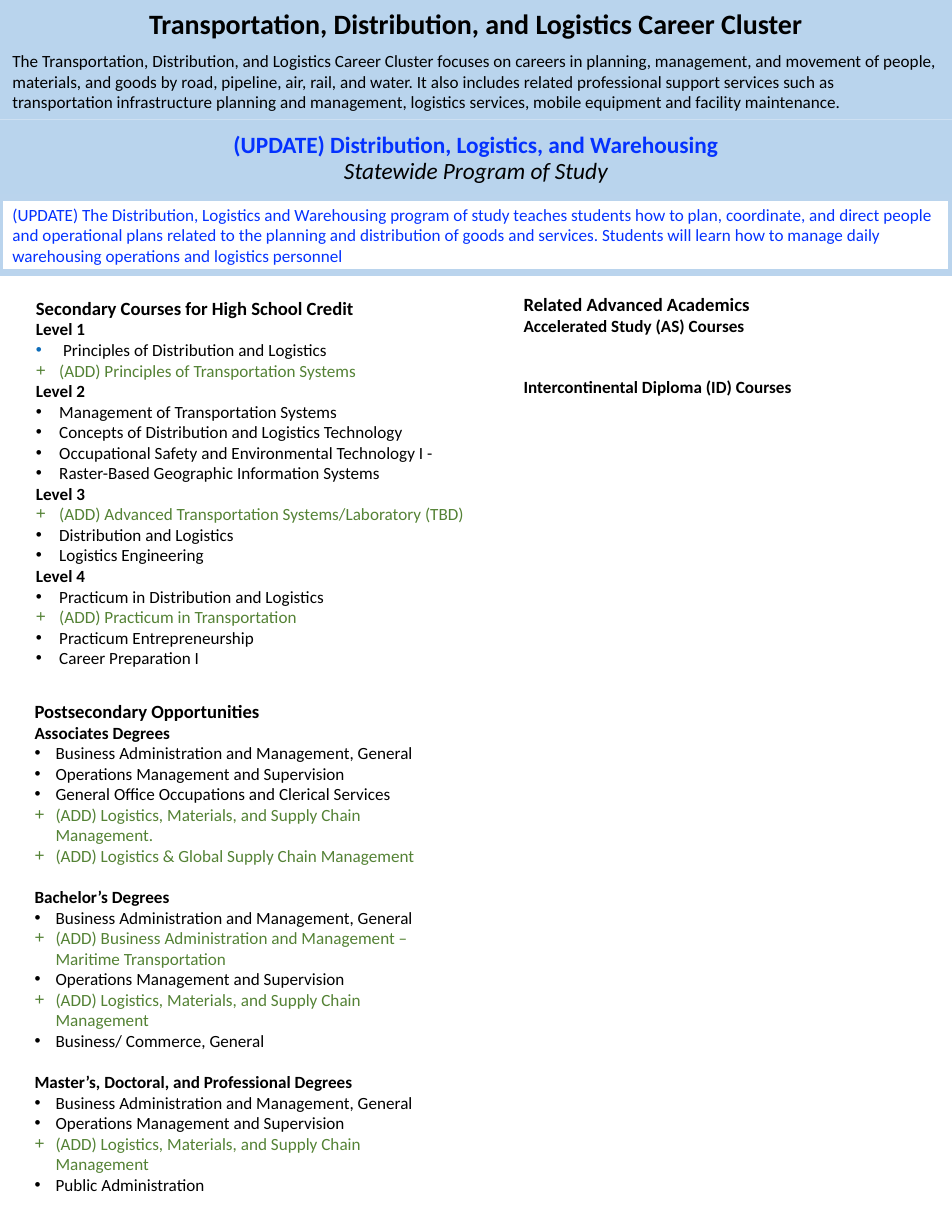
from lxml import etree
from pptx import Presentation
from pptx.dml.color import RGBColor
from pptx.enum.shapes import MSO_SHAPE
from pptx.enum.text import MSO_ANCHOR, MSO_AUTO_SIZE, PP_ALIGN
from pptx.oxml.ns import qn
from pptx.util import Pt

RECTANGLE = MSO_SHAPE.RECTANGLE
TOP, MIDDLE = MSO_ANCHOR.TOP, MSO_ANCHOR.MIDDLE
LEFT, CENTER = PP_ALIGN.LEFT, PP_ALIGN.CENTER
NO_AUTOFIT = MSO_AUTO_SIZE.NONE

COLORS = {
    "band": "B9D4ED", "frame": "BAD4ED", "white": "FFFFFF", "text": "000000",
    "update": "0432FF", "added": "548235", "accent": "0D6CB9",
}
FONT = "Calibri"
LINE = 13.2  # height of one 11-point line
PADDING = (8, 4.3)
DEFAULT_PADDING = (7.2, 3.6)

CLUSTER_TEXT = (
    "The Transportation, Distribution, and Logistics Career Cluster focuses on careers in "
    "planning, management, and movement of people, materials, and goods by road, pipeline, "
    "air, rail, and water. It also includes related professional support services such as "
    "transportation infrastructure planning and management, logistics services, mobile "
    "equipment and facility maintenance."
)
PROGRAM_TEXT = (
    "(UPDATE) The Distribution, Logistics and Warehousing program of study teaches students "
    "how to plan, coordinate, and direct people and operational plans related to the planning "
    "and distribution of goods and services. Students will learn how to manage daily "
    "warehousing operations and logistics personnel"
)

# Each group is a heading and its items; "(ADD)" marks a new item
COURSES = [
    ("Level 1", ["Principles of Distribution and Logistics",
                 "(ADD) Principles of Transportation Systems"]),
    ("Level 2", ["Management of Transportation Systems",
                 "Concepts of Distribution and Logistics Technology",
                 "Occupational Safety and Environmental Technology I -",
                 "Raster-Based Geographic Information Systems"]),
    ("Level 3", ["(ADD) Advanced Transportation Systems/Laboratory (TBD)",
                 "Distribution and Logistics",
                 "Logistics Engineering"]),
    ("Level 4", ["Practicum in Distribution and Logistics",
                 "(ADD) Practicum in Transportation",
                 "Practicum Entrepreneurship",
                 "Career Preparation I"]),
]
ACADEMICS = [
    ("Accelerated Study (AS) Courses", []),
    ("Intercontinental Diploma (ID) Courses", []),
]
DEGREES = [
    ("Associates Degrees", ["Business Administration and Management, General",
                            "Operations Management and Supervision",
                            "General Office Occupations and Clerical Services",
                            "(ADD) Logistics, Materials, and Supply Chain Management.",
                            "(ADD) Logistics & Global Supply Chain Management"]),
    ("Bachelor’s Degrees", ["Business Administration and Management, General",
                            "(ADD) Business Administration and Management –Maritime Transportation",
                            "Operations Management and Supervision",
                            "(ADD) Logistics, Materials, and Supply Chain Management",
                            "Business/ Commerce, General"]),
    ("Master’s, Doctoral, and Professional Degrees",
     ["Business Administration and Management, General",
      "Operations Management and Supervision",
      "(ADD) Logistics, Materials, and Supply Chain Management",
      "Public Administration"]),
]


def rgb(name):
    return RGBColor.from_string(COLORS[name])


def place(shape, left, top, width, height):
    shape.left, shape.top = Pt(left), Pt(top)
    shape.width, shape.height = Pt(width), Pt(height)


def set_frame(shape, padding, anchor=TOP):
    frame = shape.text_frame
    frame.word_wrap = True
    frame.auto_size = NO_AUTOFIT
    frame.vertical_anchor = anchor
    frame.margin_left = frame.margin_right = Pt(padding[0])
    frame.margin_top = frame.margin_bottom = Pt(padding[1])
    return frame


def add_bullet(para, mark, color, indent):
    props = para._p.get_or_add_pPr()
    props.set("marL", str(Pt(indent)))
    props.set("indent", str(-Pt(indent)))
    bullet_color = etree.SubElement(props, qn("a:buClr"))
    etree.SubElement(bullet_color, qn("a:srgbClr"), val=COLORS[color])
    etree.SubElement(props, qn("a:buFont"), typeface="Arial")
    etree.SubElement(props, qn("a:buChar"), char=mark)


def add_para(frame, text, size=11, color="text", bold=False, italic=False,
             align=LEFT, before=0, after=0, spacing=1.0, bullet=None):
    first = frame.paragraphs[0]
    para = frame.add_paragraph() if first.runs else first
    para.add_run().text = text
    para.alignment = align
    para.line_spacing = spacing
    para.space_before, para.space_after = Pt(before), Pt(after)
    if bullet:
        add_bullet(para, *bullet)
    font = para.font
    font.name, font.size = FONT, Pt(size)
    font.bold, font.italic = bold, italic
    font.color.rgb = rgb(color)


def add_band(page, top, height, fill, line=None):
    band = page.shapes.add_shape(RECTANGLE, 0, Pt(top), Pt(612), Pt(height))
    band.shadow.inherit = False
    band.fill.solid()
    band.fill.fore_color.rgb = rgb(fill)
    if line:
        band.line.color.rgb = rgb(line)
        band.line.width = Pt(4.5)
    else:
        band.line.fill.background()
    return set_frame(band, PADDING)


def add_list(page, bounds, heading, groups, indent=15, gap=0,
             padding=DEFAULT_PADDING, lead_color=None):
    """Add a heading with groups of items, gap points apart."""
    box = page.shapes.add_textbox(0, 0, 0, 0)
    place(box, *bounds)
    frame = set_frame(box, padding)
    add_para(frame, heading, size=12, bold=True)
    for number, (name, items) in enumerate(groups):
        add_para(frame, name, bold=True, before=gap if number else 0)
        for position, item in enumerate(items):
            if item.startswith("(ADD)"):
                add_para(frame, item, color="added", bullet=("+", "added", indent))
            elif lead_color and number == position == 0:
                # The first item stands slightly further in
                add_para(frame, item, bullet=("•", lead_color, indent + 2.5))
            else:
                add_para(frame, item, bullet=("•", "text", indent))


def add_title(page):
    title = page.shapes.title
    place(title, 0, 77, 612, 50.4)
    title.fill.solid()
    title.fill.fore_color.rgb = rgb("band")
    frame = set_frame(title, DEFAULT_PADDING, MIDDLE)
    add_para(frame, "(UPDATE) Distribution, Logistics, and Warehousing", size=15,
             color="update", bold=True, align=CENTER, spacing=0.9)
    add_para(frame, "Statewide Program of Study", size=15, italic=True,
             align=CENTER, spacing=0.9)


def main():
    deck = Presentation()
    deck.slide_width, deck.slide_height = Pt(612), Pt(792)
    page = deck.slides.add_slide(deck.slide_layouts[5])

    # Header: program title, career cluster, program description
    add_title(page)
    cluster = add_band(page, 0, 77, "band")
    add_para(cluster, "Transportation, Distribution, and Logistics Career Cluster",
             size=18, bold=True, align=CENTER, after=6.6)
    add_para(cluster, CLUSTER_TEXT)
    program = add_band(page, 127, 48, "white", "frame")
    add_para(program, PROGRAM_TEXT, color="update")

    # Course and degree lists
    add_list(page, (16, 187, 300, 248), "Secondary Courses for High School Credit",
             COURSES, lead_color="accent")
    add_list(page, (329.5, 184.5, 282, 109), "Related Advanced Academics",
             ACADEMICS, gap=2 * LINE)
    add_list(page, (14.2, 445.5, 286.5, 328), "Postsecondary Opportunities",
             DEGREES, indent=13.5, gap=LINE, padding=PADDING)

    deck.save("out.pptx")


if __name__ == "__main__":
    main()
